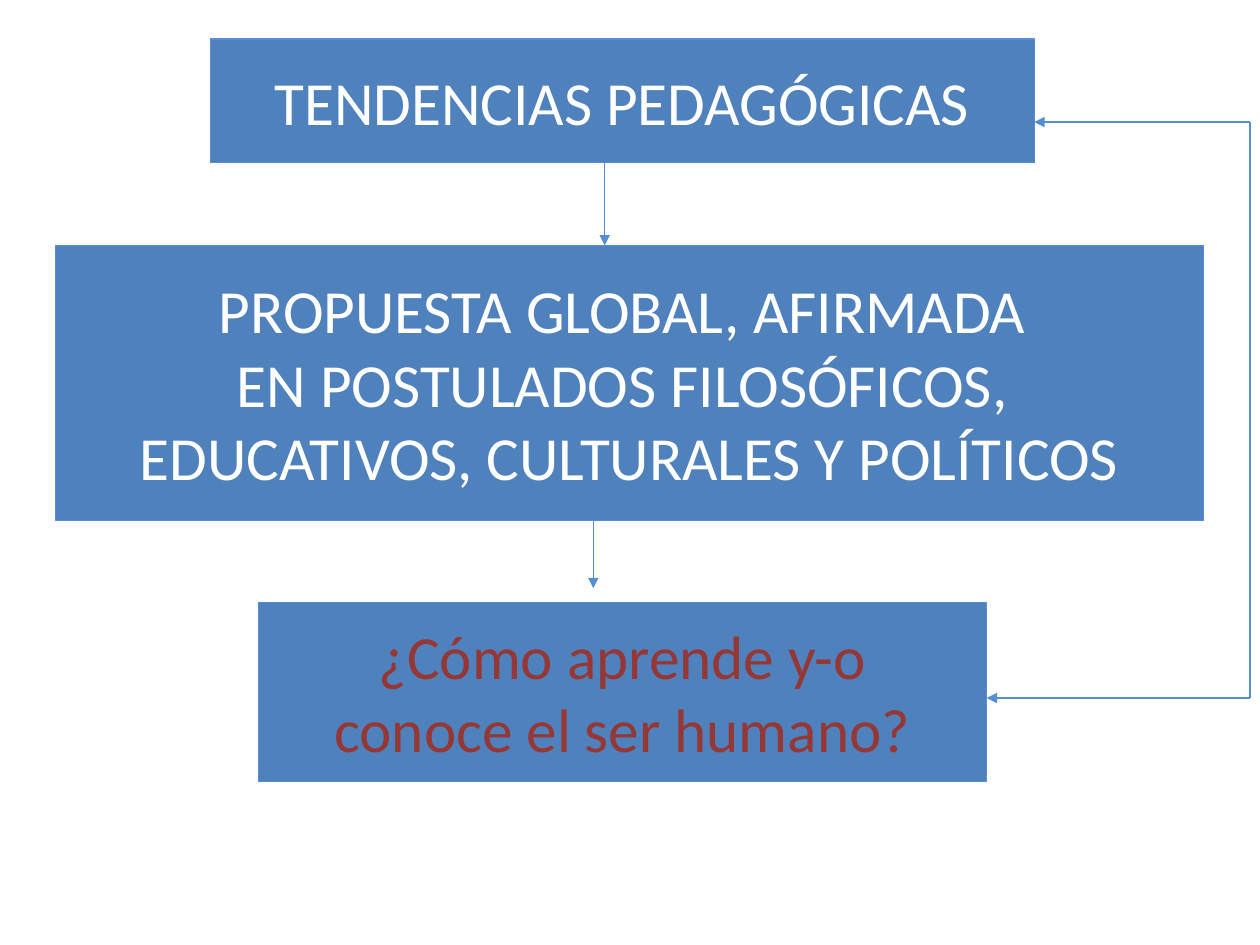
import pptx
import pptx.dml.color
import pptx.enum.shapes
import pptx.enum.text
import pptx.oxml.ns
import pptx.util
from lxml import etree
from pptx.util import Cm

BLUE = pptx.dml.color.RGBColor(0x4F, 0x81, 0xBD)
LINE_BLUE = pptx.dml.color.RGBColor(0x55, 0x8E, 0xD5)
WHITE = pptx.dml.color.RGBColor(0xFF, 0xFF, 0xFF)
DARK_RED = pptx.dml.color.RGBColor(0x95, 0x37, 0x35)
LINE_WIDTH = pptx.util.Pt(0.75)


def add_text_box(slide, left, top, width, height, lines, color):
    """Add a filled rectangle with one centred paragraph per line."""
    shape = slide.shapes.add_shape(
        pptx.enum.shapes.MSO_SHAPE.RECTANGLE, left, top, width, height)
    shape.shadow.inherit = False
    shape.fill.solid()
    shape.fill.fore_color.rgb = BLUE
    shape.line.color.rgb = LINE_BLUE
    shape.line.width = LINE_WIDTH
    frame = shape.text_frame
    frame.word_wrap = False
    frame.vertical_anchor = pptx.enum.text.MSO_ANCHOR.MIDDLE
    for index, line in enumerate(lines):
        paragraph = frame.add_paragraph() if index else frame.paragraphs[0]
        paragraph.alignment = pptx.enum.text.PP_ALIGN.CENTER
        run = paragraph.add_run()
        run.text = line
        run.font.name = "Calibri"
        run.font.size = pptx.util.Pt(35)
        run.font.color.rgb = color
    return shape


def add_line(slide, start, end, arrow=True):
    """Add a straight line, with an arrowhead at its end if wanted."""
    connector = slide.shapes.add_connector(
        pptx.enum.shapes.MSO_CONNECTOR.STRAIGHT, *start, *end)
    connector.line.color.rgb = LINE_BLUE
    connector.line.width = LINE_WIDTH
    if arrow:
        outline = connector.line._get_or_add_ln()
        etree.SubElement(outline, pptx.oxml.ns.qn("a:tailEnd"), type="triangle")
    etree.SubElement(connector._element.spPr, pptx.oxml.ns.qn("a:effectLst"))


def add_diagram(slide, left, top, width):
    """Place the three boxes and their arrows from the given corner."""
    # Boxes
    title = add_text_box(
        slide, left + Cm(3.12), top, Cm(16.61), Cm(2.49),
        ["TENDENCIAS PEDAGÓGICAS"], WHITE)
    proposal = add_text_box(
        slide, left, top + Cm(4.16), Cm(23.14), Cm(5.54),
        ["PROPUESTA GLOBAL, AFIRMADA ",
         "EN POSTULADOS FILOSÓFICOS, ",
         "EDUCATIVOS, CULTURALES Y POLÍTICOS"], WHITE)
    question = add_text_box(
        slide, left + Cm(4.09), top + Cm(11.35), Cm(14.68), Cm(3.61),
        [" ¿Cómo aprende y-o ", "conoce el ser humano?"], DARK_RED)

    # Downward arrows
    title_x = left + Cm(11.07)
    add_line(slide, (title_x, title.top + title.height), (title_x, proposal.top))
    proposal_x = left + Cm(10.84)
    add_line(slide, (proposal_x, proposal.top + proposal.height),
             (proposal_x, question.top - Cm(0.28)))

    # Loop on the right, joining the question and the title
    loop_x = left + width
    title_y = top + Cm(1.67)
    question_y = top + Cm(13.28)
    add_line(slide, (loop_x, question_y), (loop_x, title_y), arrow=False)
    for box, y in ((title, title_y), (question, question_y)):
        add_line(slide, (loop_x, y), (box.left + box.width, y))


def main():
    presentation = pptx.Presentation()
    presentation.slide_width = Cm(25.4)
    presentation.slide_height = Cm(19.05)
    slide = presentation.slides.add_slide(presentation.slide_layouts[6])
    add_diagram(slide, Cm(1.12), Cm(0.79), Cm(24.08))
    presentation.save("out.pptx")


if __name__ == "__main__":
    main()
